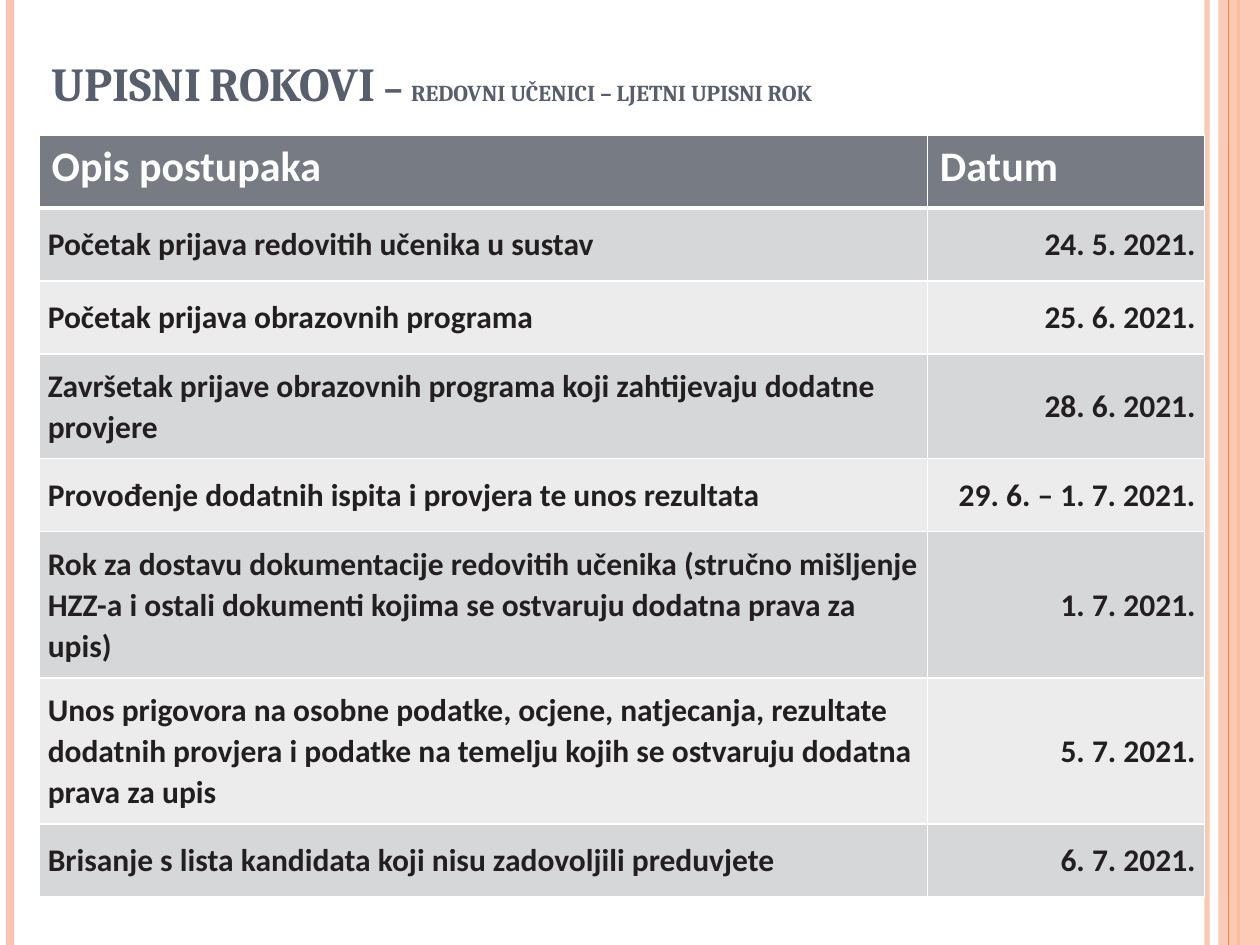
"""Build the enrolment deadlines slide with its side stripes and dates table."""
from lxml.etree import SubElement
from pptx import Presentation
from pptx.dml.color import RGBColor
from pptx.enum.shapes import MSO_CONNECTOR, MSO_SHAPE
from pptx.enum.text import MSO_ANCHOR, MSO_AUTO_SIZE, PP_ALIGN
from pptx.oxml.ns import qn
from pptx.util import Inches, Pt

COLORS = {
    "peach": "FEC3AE", "orange": "FE8637", "title": "575F6D", "header": "777C84",
    "odd": "D6D7D9", "even": "ECECED", "text": "231F20", "white": "FFFFFF",
}
WIDTH, HEIGHT = 10, 7.5
TITLE = [("UPISNI ROKOVI – ", 27), ("redovni učenici – ljetni upisni rok", 16.2)]
HEADER = ("Opis postupaka", "Datum")
DEADLINES = [
    ("Početak prijava redovitih učenika u sustav", "24. 5. 2021.", 1),
    ("Početak prijava obrazovnih programa", "25. 6. 2021.", 1),
    ("Završetak prijave obrazovnih programa koji zahtijevaju dodatne provjere",
     "28. 6. 2021.", 2),
    ("Provođenje dodatnih ispita i provjera te unos rezultata", "29. 6. – 1. 7. 2021.", 1),
    ("Rok za dostavu dokumentacije redovitih učenika (stručno mišljenje HZZ-a i ostali "
     "dokumenti kojima se ostvaruju dodatna prava za upis)", "1. 7. 2021.", 3),
    ("Unos prigovora na osobne podatke, ocjene, natjecanja, rezultate dodatnih provjera "
     "i podatke na temelju kojih se ostvaruju dodatna prava za upis", "5. 7. 2021.", 3),
    ("Brisanje s lista kandidata koji nisu zadovoljili preduvjete", "6. 7. 2021.", 1),
]
ROW_HEIGHTS = {1: 0.58, 2: 0.83, 3: 1.16}
COLUMN_WIDTHS = (7.05, 2.2)
LEFT, TABLE_TOP = 0.31, 1.07
STRIPES_BEHIND = [(9.58, "peach", 3, 93), (0.08, "peach", 4.5, 100), (9.83, "orange", 1.5, 100)]
STRIPES_FRONT = [(9.75, "orange", 0.75, 100)]


def color(name):
    return RGBColor.from_string(COLORS[name])


def set_opacity(fill_parent, percent):
    rgb = fill_parent.find(qn("a:solidFill")).find(qn("a:srgbClr"))
    SubElement(rgb, qn("a:alpha"), val=str(percent * 1000))


def add_stripe(slide, x, color_name, weight, opacity):
    stripe = slide.shapes.add_connector(
        MSO_CONNECTOR.STRAIGHT, Inches(x), 0, Inches(x), Inches(HEIGHT))
    stripe.line.color.rgb = color(color_name)
    stripe.line.width = Pt(weight)
    properties = stripe._element.spPr
    if opacity < 100:
        set_opacity(properties.find(qn("a:ln")), opacity)
    SubElement(properties, qn("a:effectLst"))


def add_band(slide):
    left = WIDTH - 0.33
    band = slide.shapes.add_shape(
        MSO_SHAPE.RECTANGLE, Inches(left), 0, Inches(WIDTH - left), Inches(HEIGHT))
    band.shadow.inherit = False
    band.fill.solid()
    band.fill.fore_color.rgb = color("peach")
    band.line.fill.background()
    set_opacity(band._element.spPr, 87)


def add_text(paragraph, text, *, font, size, color_name, small_caps=False):
    run = paragraph.add_run()
    run.text = text
    run.font.name = font
    run.font.size = Pt(size)
    run.font.bold = True
    run.font.color.rgb = color(color_name)
    if small_caps:
        run._r.get_or_add_rPr().set("cap", "small")


def fill_title(title):
    title.left, title.top = Inches(LEFT), Inches(0.16)
    title.width, title.height = Inches(8.17), Inches(0.77)
    frame = title.text_frame
    frame.auto_size = MSO_AUTO_SIZE.NONE
    frame.word_wrap = True
    frame.vertical_anchor = MSO_ANCHOR.BOTTOM
    paragraph = frame.paragraphs[0]
    paragraph.alignment = PP_ALIGN.LEFT
    for text, size in TITLE:
        add_text(paragraph, text, font="Cambria", size=size, color_name="title", small_caps=True)


def set_borders(cell, **weights):
    properties = cell._tc.get_or_add_tcPr()
    for position, (side, weight) in enumerate(weights.items()):
        line = SubElement(properties, qn(f"a:{side}"), w=str(Pt(weight)))
        SubElement(SubElement(line, qn("a:solidFill")), qn("a:srgbClr"), val=COLORS["white"])
        properties.insert(position, line)


def format_cell(cell, text, *, row, column):
    is_header = row == 0
    paragraph = cell.text_frame.paragraphs[0]
    add_text(paragraph, text, font="Calibri", size=24 if is_header else 18,
             color_name="white" if is_header else "text")
    cell.fill.solid()
    cell.fill.fore_color.rgb = color("header" if is_header else "odd" if row % 2 else "even")
    if not is_header:
        cell.vertical_anchor = MSO_ANCHOR.MIDDLE
        cell.margin_left = cell.margin_right = cell.margin_top = Inches(0.07)
        cell.margin_bottom = Inches(0.08)
        paragraph.line_spacing = 1.07
        paragraph.alignment = PP_ALIGN.RIGHT if column else PP_ALIGN.LEFT
    set_borders(cell, lnL=1, lnR=1, lnT=3 if row == 1 else 1, lnB=3 if is_header else 1)


def add_deadlines(slide):
    rows = [(*HEADER, 1), *DEADLINES]
    heights = [ROW_HEIGHTS[lines] for *_, lines in rows]
    table = slide.shapes.add_table(
        len(rows), len(COLUMN_WIDTHS), Inches(LEFT), Inches(TABLE_TOP),
        Inches(sum(COLUMN_WIDTHS)), Inches(sum(heights))).table
    for column, width in zip(table.columns, COLUMN_WIDTHS):
        column.width = Inches(width)
    for row, (*texts, _) in enumerate(rows):
        table.rows[row].height = Inches(heights[row])
        for column, text in enumerate(texts):
            format_cell(table.cell(row, column), text, row=row, column=column)


def main():
    presentation = Presentation()
    presentation.slide_width, presentation.slide_height = Inches(WIDTH), Inches(HEIGHT)
    slide = presentation.slides.add_slide(presentation.slide_layouts[5])
    for stripe in STRIPES_BEHIND:
        add_stripe(slide, *stripe)
    add_band(slide)
    for stripe in STRIPES_FRONT:
        add_stripe(slide, *stripe)
    fill_title(slide.shapes.title)
    add_deadlines(slide)
    presentation.save("out.pptx")


if __name__ == "__main__":
    main()
